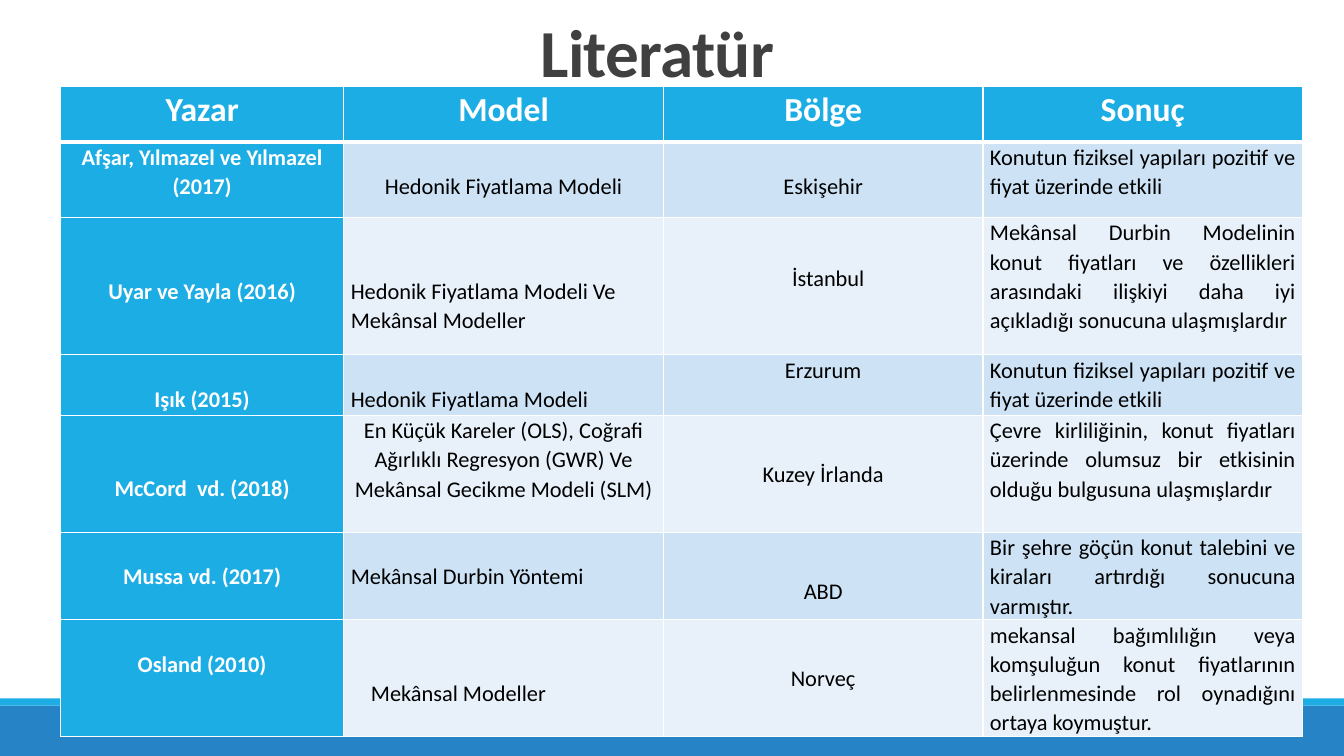
from pptx import Presentation
from pptx.dml.color import RGBColor as RGB
from pptx.enum.shapes import MSO_SHAPE as Shape
from pptx.enum.text import MSO_ANCHOR as Anchor, PP_ALIGN as Align
from pptx.oxml import parse_xml
from pptx.oxml.ns import nsdecls
from pptx.util import Inches, Pt

# Content: each cell is (text, alignment, lines left free above, inset on the left)
TITLE = "Literatür"
HEADS = ["Yazar", "Model", "Bölge", "Sonuç"]
ROWS = [
    [("Afşar, Yılmazel ve Yılmazel (2017)", "c", 0, 0),
     ("Hedonik Fiyatlama Modeli", "c", 1, 0),
     ("Eskişehir", "c", 1, 0),
     ("Konutun fiziksel yapıları pozitif ve fiyat üzerinde etkili", "j", 0, 0)],
    [("Uyar ve Yayla (2016)", "c", 2, 0),
     ("Hedonik Fiyatlama Modeli Ve Mekânsal Modeller", "l", 2, 0),
     ("İstanbul", "c", 1.55, 0.1),
     ("Mekânsal Durbin Modelinin konut fiyatları ve özellikleri arasındaki "
      "ilişkiyi daha iyi açıkladığı sonucuna ulaşmışlardır", "j", 0, 0)],
    [("Işık (2015)", "c", 1, 0),
     ("Hedonik Fiyatlama Modeli", "l", 1, 0),
     ("Erzurum", "c", 0, 0),
     ("Konutun fiziksel yapıları pozitif ve fiyat üzerinde etkili", "j", 0, 0)],
    [("McCord  vd. (2018)", "c", 2, 0),
     ("En Küçük Kareler (OLS), Coğrafi Ağırlıklı Regresyon (GWR) Ve "
      "Mekânsal Gecikme Modeli (SLM)", "c", 0, 0),
     ("Kuzey İrlanda", "c", 1.5, 0),
     ("Çevre kirliliğinin, konut fiyatları üzerinde olumsuz bir etkisinin "
      "olduğu bulgusuna ulaşmışlardır", "j", 0, 0)],
    [("Mussa vd. (2017)", "c", 1, 0),
     ("Mekânsal Durbin Yöntemi", "l", 1, 0),
     ("ABD", "c", 1.5, 0),
     ("Bir şehre göçün konut talebini ve kiraları artırdığı sonucuna "
      "varmıştır.", "j", 0, 0)],
    [("Osland (2010)", "c", 1, 0),
     ("Mekânsal Modeller", "l", 2, 0.2),
     ("Norveç", "c", 1.5, 0),
     ("mekansal bağımlılığın veya komşuluğun konut fiyatlarının "
      "belirlenmesinde rol oynadığını ortaya koymuştur.", "j", 0, 0)],
]

# Measures in inches
WIDE, HIGH = 13.33, 7.5
LEFT, TOP = 0.6, 0.86
COLS = [2.81] + [3.17] * 3
TALL = [0.55, 0.75, 1.36, 0.6, 1.16, 0.87, 1.16]
LINE = 0.29
SIDE = 0.07
BLUE, DEEP, BANDS = "1CADE4", "2683C6", ["CDE3F5", "E8F1FA"]
ALIGN = {"c": Align.CENTER, "l": Align.LEFT, "j": Align.JUSTIFY}


def paint(fill, hue):
    fill.solid()
    fill.fore_color.rgb = RGB.from_string(hue)


def write(frame, text, size, hue, bold, align, lead):
    frame.text = text
    frame.word_wrap = True
    para = frame.paragraphs[0]
    para.alignment = ALIGN[align]
    para.line_spacing = lead
    font = para.runs[0].font
    font.name, font.size, font.bold = "Calibri", Pt(size), bold
    font.color.rgb = RGB.from_string(hue)
    return font


def edge(cell, side, width):
    line = parse_xml(
        f'<a:ln{side} {nsdecls("a")} w="{Pt(width)}"><a:solidFill>'
        f'<a:srgbClr val="FFFFFF"/></a:solidFill></a:ln{side}>')
    cell._tc.get_or_add_tcPr().append(line)


def bar(top, tall, hue):
    box = slide.shapes.add_shape(
        Shape.RECTANGLE, 0, Inches(top), Inches(WIDE), Inches(tall))
    box.shadow.inherit = False
    paint(box.fill, hue)
    box.line.fill.background()


deck = Presentation()
deck.slide_width, deck.slide_height = Inches(WIDE), Inches(HIGH)
slide = deck.slides.add_slide(deck.slide_layouts[6])

# Bottom bars
bar(7, 0.5, DEEP)
bar(6.93, 0.07, BLUE)

# Title
head = slide.shapes.add_textbox(
    Inches(0.77), Inches(0.15), Inches(11.5), Inches(0.83)).text_frame
head.vertical_anchor = Anchor.MIDDLE
font = write(head, TITLE, 48, "404040", True, "c", 0.85)
font._element.set("spc", "-50")

# Table
grid = slide.shapes.add_table(
    len(TALL), len(COLS), Inches(LEFT), Inches(TOP),
    Inches(sum(COLS)), Inches(sum(TALL))).table
for col, width in zip(grid.columns, COLS):
    col.width = Inches(width)
for row, tall in zip(grid.rows, TALL):
    row.height = Inches(tall)

for r, row in enumerate([[(name, "c", 0, 0) for name in HEADS]] + ROWS):
    for c, (text, align, skip, inset) in enumerate(row):
        cell = grid.cell(r, c)
        strong = r == 0 or c == 0
        cell.margin_left = Inches(SIDE + inset)
        cell.margin_right = Inches(SIDE)
        cell.margin_top = Inches(skip * LINE)
        cell.margin_bottom = 0
        for side in "LRTB":
            thick = (r, side) in [(0, "B"), (1, "T")]
            edge(cell, side, 3 if thick else 1)
        paint(cell.fill, BLUE if strong else BANDS[(r - 1) % 2])
        write(cell.text_frame, text, 16 if r else 24,
              "FFFFFF" if strong else "000000", strong, align, 1.07)

deck.save("out.pptx")
